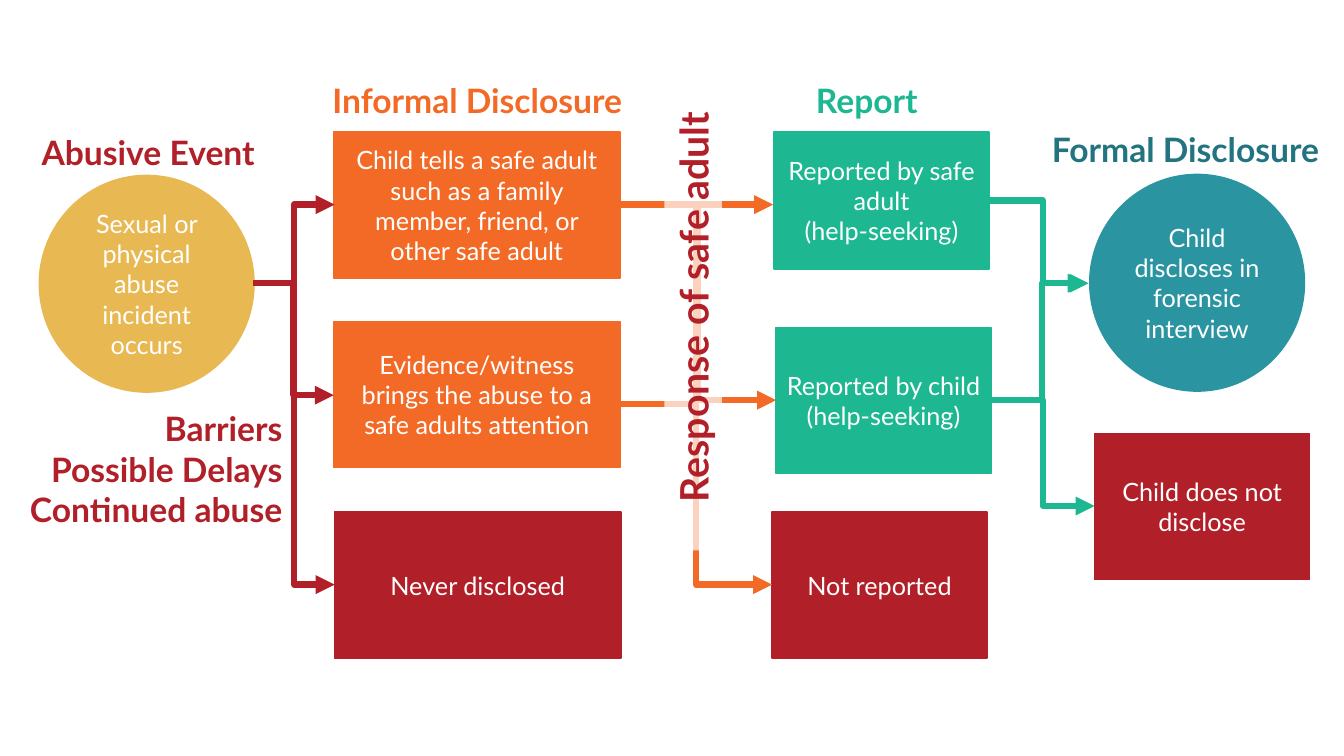
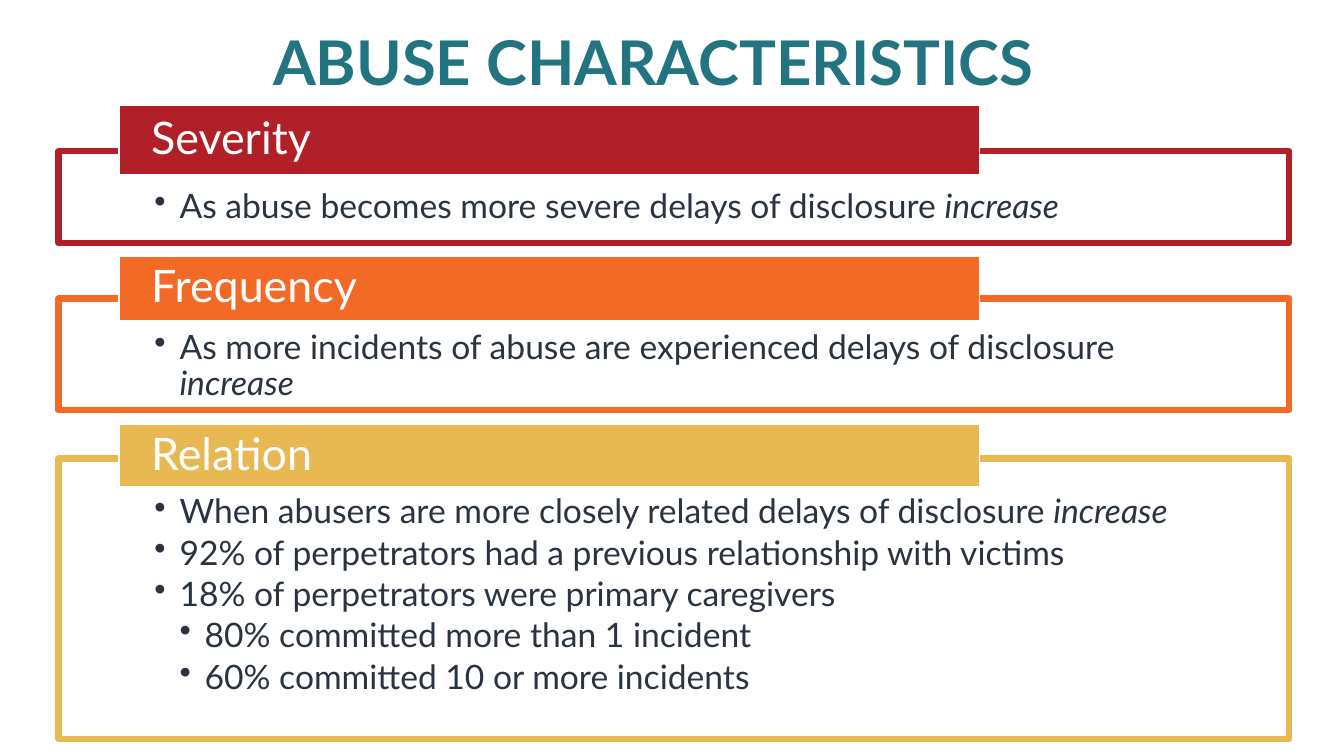
from lxml import etree
from pptx import Presentation
from pptx.dml.color import RGBColor
from pptx.enum.shapes import MSO_CONNECTOR, MSO_SHAPE
from pptx.enum.text import MSO_ANCHOR, PP_ALIGN
from pptx.oxml.ns import qn
from pptx.util import Inches, Pt

RECT, OVAL = MSO_SHAPE.RECTANGLE, MSO_SHAPE.OVAL
BENT, LINE = MSO_CONNECTOR.ELBOW, MSO_CONNECTOR.STRAIGHT
TOP, MID = MSO_ANCHOR.TOP, MSO_ANCHOR.MIDDLE
LEFT, MIDST, RIGHT = PP_ALIGN.LEFT, PP_ALIGN.CENTER, PP_ALIGN.RIGHT

RED = RGBColor(0xB1, 0x1F, 0x28)
ORANGE = RGBColor(0xF3, 0x6A, 0x26)
GOLD = RGBColor(0xE8, 0xB8, 0x52)
GREEN = RGBColor(0x1D, 0xB7, 0x91)
TEAL = RGBColor(0x2A, 0x94, 0xA1)
DEEP = RGBColor(0x22, 0x75, 0x80)
INK = RGBColor(0x2A, 0x34, 0x41)
WHITE = RGBColor(0xFF, 0xFF, 0xFF)

FONT = "Lato"
THICK = 4.5
STEP = Inches(0.25)  # bullet indent

deck = Presentation()
deck.slide_width, deck.slide_height = Inches(13.33), Inches(7.5)
# The grid has 100 columns and 100 rows
COL, ROW = deck.slide_width / 100, deck.slide_height / 100
BLANK = deck.slide_layouts[6]


def put(slide, place, text, form=None, fill=None, edge=None, width=1, size=18,
        color=WHITE, bold=False, align=MIDST, anchor=TOP, pad=None,
        bullet=False, tight=False):
    """Add text at (column, row, columns, rows); *stars* set italics, > a sub-bullet."""
    x, y, w, h = place
    area = int(x * COL), int(y * ROW), int(w * COL), int(h * ROW)
    if form is None:
        shape = slide.shapes.add_textbox(*area)
    else:
        shape = slide.shapes.add_shape(form, *area)
        shape.shadow.inherit = False
        shape.fill.solid()
        shape.fill.fore_color.rgb = fill
        if edge is None:
            shape.line.fill.background()
        else:
            shape.line.color.rgb = edge
            shape.line.width = Pt(width)
    frame = shape.text_frame
    frame.word_wrap = True
    frame.vertical_anchor = anchor
    if pad:
        side, top = pad
        frame.margin_left = frame.margin_right = int(side * COL)
        frame.margin_top, frame.margin_bottom = int(top * ROW), 0
    for n, row in enumerate(text.split("\n")):
        para = frame.add_paragraph() if n else frame.paragraphs[0]
        para.alignment = align
        if tight:
            para.line_spacing = 0.9
        if bullet:
            depth = 2 if row.startswith(">") else 1
            para.space_after = Pt(size * 0.15)
            props = para._p.get_or_add_pPr()
            props.set("marL", str(depth * STEP))
            props.set("indent", str(-STEP))
            etree.SubElement(props, qn("a:buChar")).set("char", "•")
        for k, part in enumerate(row.lstrip(">").split("*")):
            if part:
                run = para.add_run()
                run.text = part
                font = run.font
                font.name, font.size, font.bold = FONT, Pt(size), bold
                font.italic = k % 2 == 1
                font.color.rgb = color
    return shape


def link(slide, kind, start, end, color, head=True, bend=None):
    """Join two grid points; bend is the share of the way to the turn."""
    (a, b), (c, d) = start, end
    line = slide.shapes.add_connector(
        kind, int(a * COL), int(b * ROW), int(c * COL), int(d * ROW))
    line.line.color.rgb = color
    line.line.width = Pt(THICK)
    props = line._element.spPr
    if head:
        etree.SubElement(props.find(qn("a:ln")), qn("a:tailEnd")).set("type", "triangle")
    if bend:
        geom = props.find(qn("a:prstGeom"))
        turn = geom.find(qn("a:avLst"))
        if turn is None:
            turn = etree.SubElement(geom, qn("a:avLst"))
        guide = etree.SubElement(turn, qn("a:gd"))
        guide.set("name", "adj1")
        guide.set("fmla", f"val {int(bend * 100000)}")
    etree.SubElement(props, qn("a:effectLst"))


# Slide 1: paths of disclosure
flow = deck.slides.add_slide(BLANK)

# Stage headings
for x, y, w, text, color in (
    (0.15, 16.8, 21.75, "Abusive Event", RED),
    (23.18, 9.87, 24.68, "Informal Disclosure", ORANGE),
    (53.62, 9.87, 21.75, "Report", GREEN),
    (77.33, 16.4, 21.75, "Formal Disclosure", DEEP),
):
    put(flow, (x, y, w, 6.7), text, size=24, color=color, bold=True)
put(flow, (0, 53.33, 21.75, 17.47), "Barriers\nPossible Delays\nContinued abuse",
    size=24, color=RED, bold=True, align=RIGHT)

# Steps
WIDE, SLIM, TALL, DISC = 21.3, 15.98, 19.33, 28.67
for form, x, y, w, h, color, text in (
    (OVAL, 2.92, 23.2, SLIM, DISC, GOLD, "Sexual or physical abuse incident occurs"),
    (RECT, 24.83, 17.47, WIDE, TALL, ORANGE,
     "Child tells a safe adult such as a family member, friend, or other safe adult"),
    (RECT, 24.83, 42.53, WIDE, TALL, ORANGE,
     "Evidence/witness brings the abuse to a safe adults attention"),
    (RECT, 24.9, 67.73, WIDE, TALL, RED, "Never disclosed"),
    (RECT, 57.6, 17.47, SLIM, 18.13, GREEN, "Reported by safe adult\n(help-seeking)"),
    (RECT, 57.75, 43.33, SLIM, TALL, GREEN, "Reported by child\n(help-seeking)"),
    (RECT, 57.45, 67.73, SLIM, TALL, RED, "Not reported"),
    (OVAL, 81.08, 23.07, SLIM, DISC, TEAL, "Child discloses in forensic interview"),
    (RECT, 81.45, 57.33, SLIM, TALL, RED, "Child does not disclose"),
):
    put(flow, (x, y, w, h), text, form, color, color, anchor=MID)

# Arrows from the event, to the interview, and to the reports
event, told = (18.86, 37.47), (46.13, 27.07)
for end in ((24.9, 77.33), (24.83, 52.27), (24.9, 27.07)):
    link(flow, BENT, event, end, RED)
for start, end, bend in (
    ((73.73, 52.93), (81.45, 66.93), 0.5),
    ((73.65, 52.93), (81, 37.47), 0.53),
    ((73.28, 26.53), (80.85, 37.47), 0.57),
):
    link(flow, BENT, start, end, GREEN, bend=bend)
for end in ((57.75, 52.93), (57.45, 77.33)):
    link(flow, BENT, told, end, ORANGE)
link(flow, LINE, (47.1, 27.07), (57.53, 27.07), ORANGE)
link(flow, LINE, (51.83, 53.47), (44.85, 53.47), ORANGE, head=False)

# Sheer upright band over the arrows
band = put(flow, (34.88, 39.33, 33.38, 7.6), "Response of safe adult", RECT, WHITE,
           size=28, color=RED, bold=True, align=RIGHT)
band.rotation = 270
tint = band._element.spPr.find(".//" + qn("a:srgbClr"))
etree.SubElement(tint, qn("a:alpha")).set("val", "70000")

# Slide 2: abuse characteristics
traits = deck.slides.add_slide(BLANK)
put(traits, (5.5, 0, 86.25, 17.2), "ABUSE CHARACTERISTICS", size=44, color=DEEP,
    bold=True, anchor=MID, tight=True)

# Framed lists, each with a tab on its top edge
for name, color, tab, high, top, deep, drop, text in (
    ("Severity", RED, 13.87, 9.2, 20, 12.13, 5.07,
     "As abuse becomes more severe delays of disclosure *increase*"),
    ("Frequency", ORANGE, 33.87, 8.53, 39.47, 14.8, 4.27,
     "As more incidents of abuse are experienced delays of disclosure *increase*"),
    ("Relation", GOLD, 56.13, 8.27, 60.67, 37.07, 4.8,
     "When abusers are more closely related delays of disclosure *increase*\n"
     "92% of perpetrators had a previous relationship with victims\n"
     "18% of perpetrators were primary caregivers\n"
     ">80% committed more than 1 incident\n"
     ">60% committed 10 or more incidents"),
):
    put(traits, (4.35, top, 91.58, deep), text, RECT, WHITE, color, THICK, size=24,
        color=INK, align=LEFT, pad=(7.13, drop), bullet=True, tight=True)
    put(traits, (8.85, tab, 64.05, high), name, RECT, color, WHITE, size=32,
        align=LEFT, anchor=MID, pad=(2.4, 0), tight=True)

deck.save("out.pptx")
